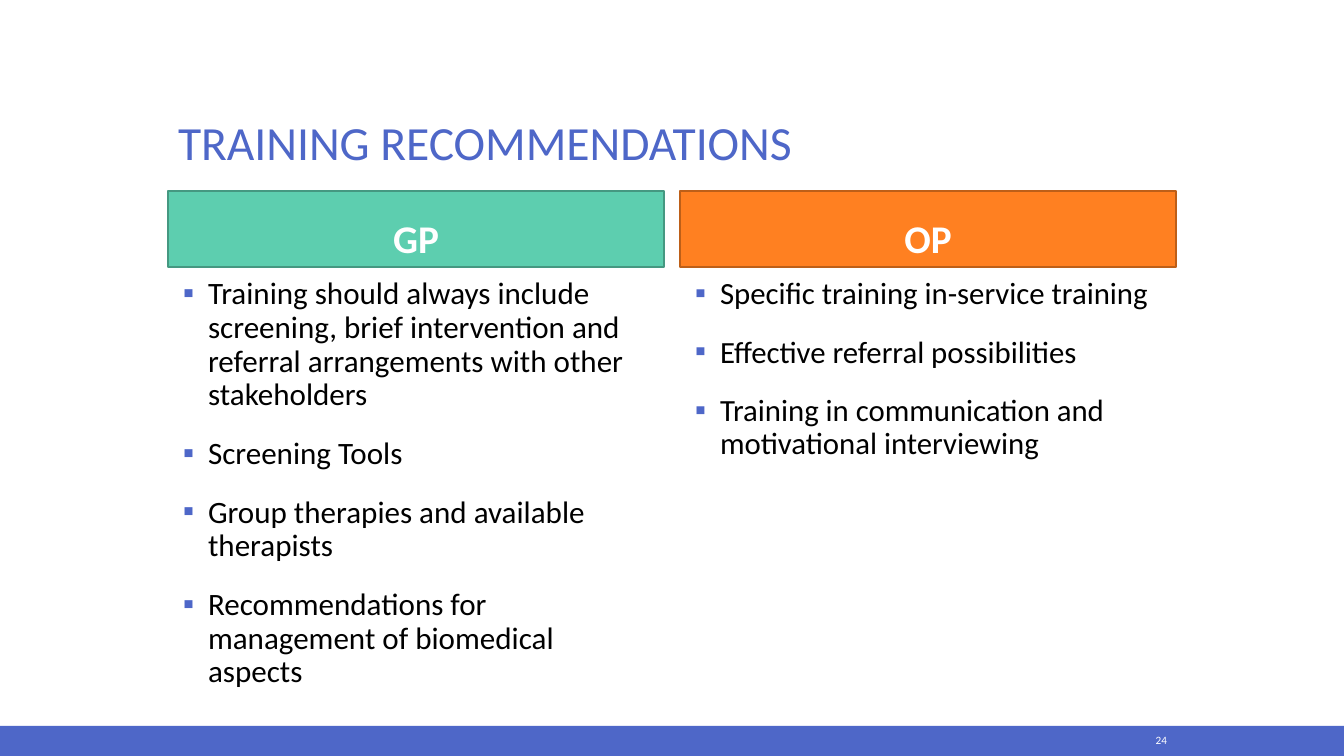
import lxml.etree
import pptx
import pptx.dml.color
import pptx.enum.shapes
import pptx.enum.text
import pptx.oxml.ns
import pptx.util

PX = 9525 / 1.05
ANCHOR = pptx.enum.text.MSO_ANCHOR
ALIGN = pptx.enum.text.PP_ALIGN
THEME = {
    "font": "Calibri",
    "blue": "4E67C8", "white": "FFFFFF", "black": "000000",
    "green": "5DCEAF", "pine": "459881",
    "orange": "FF8021", "rust": "BD5F18",
    "title": 34, "head": 28, "number": 8,
}


def place(shape, *box):
    for name, size in zip(("left", "top", "width", "height"), box):
        setattr(shape, name, round(size * PX))


def write(shape, lines, size, color, anchor, para, bold=False):
    frame = shape.text_frame
    frame.text = "\n".join(lines)
    look = {"word_wrap": True, "vertical_anchor": anchor,
            "auto_size": pptx.enum.text.MSO_AUTO_SIZE.NONE}
    for name, value in look.items():
        setattr(frame, name, value)
    type_look = {"name": THEME["font"], "size": pptx.util.Pt(size), "bold": bold}
    for item in frame.paragraphs:
        for name, value in para.items():
            setattr(item, name, value)
        font = item.runs[0].font
        for name, value in type_look.items():
            setattr(font, name, value)
        font.color.rgb = pptx.dml.color.RGBColor.from_string(THEME[color])


deck = pptx.Presentation()
deck.slide_width = round(1344 * PX)
deck.slide_height = round(756 * PX)
slide = deck.slides.add_slide(deck.slide_layouts[4])
holders = {item.placeholder_format.idx: item for item in slide.placeholders}

bar = slide.shapes.add_shape(
    pptx.enum.shapes.MSO_SHAPE.RECTANGLE, 0, round(726 * PX), deck.slide_width, round(30 * PX))
bar.shadow.inherit = False
bar.fill.solid()
bar.fill.fore_color.rgb = pptx.dml.color.RGBColor.from_string(THEME["blue"])
bar.line.fill.background()

tight = {"line_spacing": 0.9, "space_before": pptx.util.Pt(0)}
place(holders[0], 168, 50, 1008, 126)
write(holders[0], ["TRAINING RECOMMENDATIONS"], THEME["title"], "blue",
      ANCHOR.BOTTOM, {**tight, "alignment": ALIGN.LEFT})

columns = [
    ("GP", "green", "pine", 22.2, [
        "Training should always include screening, brief intervention and "
        "referral arrangements with other stakeholders",
        "Screening Tools",
        "Group therapies and available therapists",
        "Recommendations for management of biomedical aspects",
    ]),
    ("OP", "orange", "rust", 22, [
        "Specific training in-service training",
        "Effective referral possibilities",
        "Training in communication and motivational interviewing",
    ]),
]
qn = pptx.oxml.ns.qn
for col, (name, fill, edge, size, points) in enumerate(columns):
    left = 168 + 512 * col
    head, body = holders[1 + 2 * col], holders[2 + 2 * col]

    place(head, left, 191, 496, 76)
    head.fill.solid()
    head.fill.fore_color.rgb = pptx.dml.color.RGBColor.from_string(THEME[fill])
    head.line.color.rgb = pptx.dml.color.RGBColor.from_string(THEME[edge])
    head.line.width = pptx.util.Pt(1)
    write(head, [name], THEME["head"], "white", ANCHOR.BOTTOM,
          {**tight, "alignment": ALIGN.CENTER}, True)

    place(body, left, 273, 496, 407)
    write(body, points, size, "black", ANCHOR.TOP,
          {"line_spacing": 0.9, "space_before": pptx.util.Pt(18)})
    for item in body.text_frame.paragraphs:
        props = item._p.get_or_add_pPr()
        props.set("marL", str(round(30 * PX)))
        props.set("indent", str(round(-25 * PX)))
        tint = lxml.etree.SubElement(props, qn("a:buClr"))
        lxml.etree.SubElement(tint, qn("a:srgbClr"), val=THEME["blue"])
        lxml.etree.SubElement(props, qn("a:buFont"), typeface=THEME["font"])
        lxml.etree.SubElement(props, qn("a:buChar"), char="▪")

number = slide.shapes.add_textbox(0, 0, 0, 0)
place(number, 1091, 728, 86, 25)
write(number, ["24"], THEME["number"], "white", ANCHOR.MIDDLE, {"alignment": ALIGN.RIGHT})

deck.save("out.pptx")
